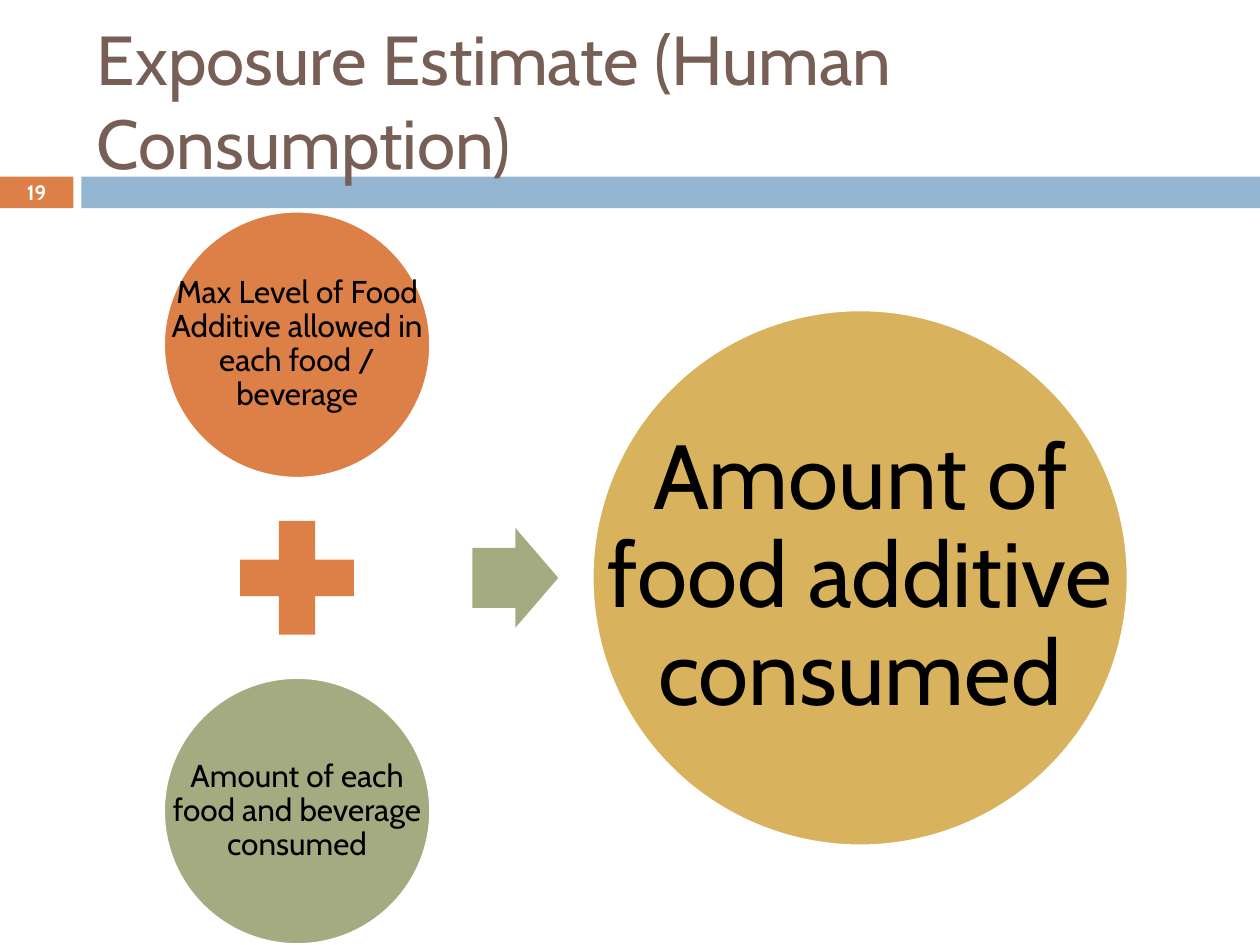
from dataclasses import dataclass

from pptx import Presentation
from pptx.dml.color import RGBColor
from pptx.enum.shapes import MSO_SHAPE as Shape
from pptx.enum.text import MSO_ANCHOR as Anchor, MSO_AUTO_SIZE as AutoSize, PP_ALIGN as Align
from pptx.util import Cm, Pt

FONT = "Cabin"
ORANGE, GREEN, GOLD, BLUE = "DD8047", "A5AB81", "D8B25C", "94B6D2"
BROWN, BLACK, WHITE = "775F55", "000000", "FFFFFF"

# Centre lines of the diagram, in cm
LEFT_X, MID_Y, SPREAD = 5.99, 11.65, 4.7


@dataclass
class Circle:
    text: str
    x: float
    y: float
    diameter: float
    color: str
    size: float
    inset: float


CIRCLES = [
    Circle("Max Level of Food Additive allowed in each food / beverage",
           LEFT_X, MID_Y - SPREAD, 5.38, ORANGE, 18, 0.08),
    Circle("Amount of each food and beverage consumed",
           LEFT_X, MID_Y + SPREAD, 5.38, GREEN, 18, 0.08),
    Circle("Amount of food additive consumed",
           17.34, MID_Y, 10.8, GOLD, 52, 0.18),
]


def rgb(color: str) -> RGBColor:
    return RGBColor.from_string(color)


def style_text(tf, text: str, size: float, color: str, align=Align.CENTER):
    """Fill a text frame with one middle-anchored paragraph."""
    tf.word_wrap = True
    tf.auto_size = AutoSize.NONE
    tf.vertical_anchor = Anchor.MIDDLE
    tf.text = text
    p = tf.paragraphs[0]
    p.alignment = align
    p.font.name, p.font.size = FONT, Pt(size)
    p.font.color.rgb = rgb(color)
    return p


def add_shape(slide, kind, x: float, y: float, w: float, h: float, color: str):
    """Add a filled, unlined shape centred on (x, y)."""
    sp = slide.shapes.add_shape(kind, Cm(x - w / 2), Cm(y - h / 2), Cm(w), Cm(h))
    sp.shadow.inherit = False
    sp.fill.solid()
    sp.fill.fore_color.rgb = rgb(color)
    sp.line.fill.background()
    return sp


def add_circle(slide, c: Circle) -> None:
    sp = add_shape(slide, Shape.OVAL, c.x, c.y, c.diameter, c.diameter, c.color)
    sp.line.color.rgb = rgb(WHITE)
    sp.line.width = Pt(1.5)
    # The label spans the full diameter, wider than the oval's own text area
    tf = slide.shapes.add_textbox(sp.left, sp.top, sp.width, sp.height).text_frame
    tf.margin_left = tf.margin_right = tf.margin_top = tf.margin_bottom = Cm(c.inset)
    p = style_text(tf, c.text, c.size, BLACK)
    p.line_spacing = 0.9


def main() -> None:
    prs = Presentation()
    prs.slide_width, prs.slide_height = Cm(25.4), Cm(19.05)
    slide = prs.slides.add_slide(prs.slide_layouts[5])

    # Header band with the slide number
    title = slide.shapes.title
    number = add_shape(slide, Shape.RECTANGLE, 0.74, 3.88, 1.48, 0.64, ORANGE)
    band = add_shape(slide, Shape.RECTANGLE, 13.52, 3.88, 23.76, 0.64, BLUE)
    for sp in (number, band):
        title._element.addprevious(sp._element)
    tf = number.text_frame
    tf.margin_top = tf.margin_bottom = 0
    style_text(tf, "19", 11.9, WHITE).font.bold = True

    # Title
    title.left, title.top, title.width, title.height = Cm(1.7), Cm(0.64), Cm(22.66), Cm(2.74)
    style_text(title.text_frame, "Exposure Estimate (Human Consumption)", 39.6, BROWN, Align.LEFT)

    # Diagram: two inputs, a plus sign and an arrow to the result
    for c in CIRCLES:
        add_circle(slide, c)
    add_shape(slide, Shape.MATH_PLUS, LEFT_X, MID_Y, 3.12, 3.12, ORANGE)
    arrow = add_shape(slide, Shape.RIGHT_ARROW, 10.39, MID_Y, 1.73, 2.01, GREEN)
    arrow.adjustments[0] = 0.6

    prs.save("out.pptx")


if __name__ == "__main__":
    main()
